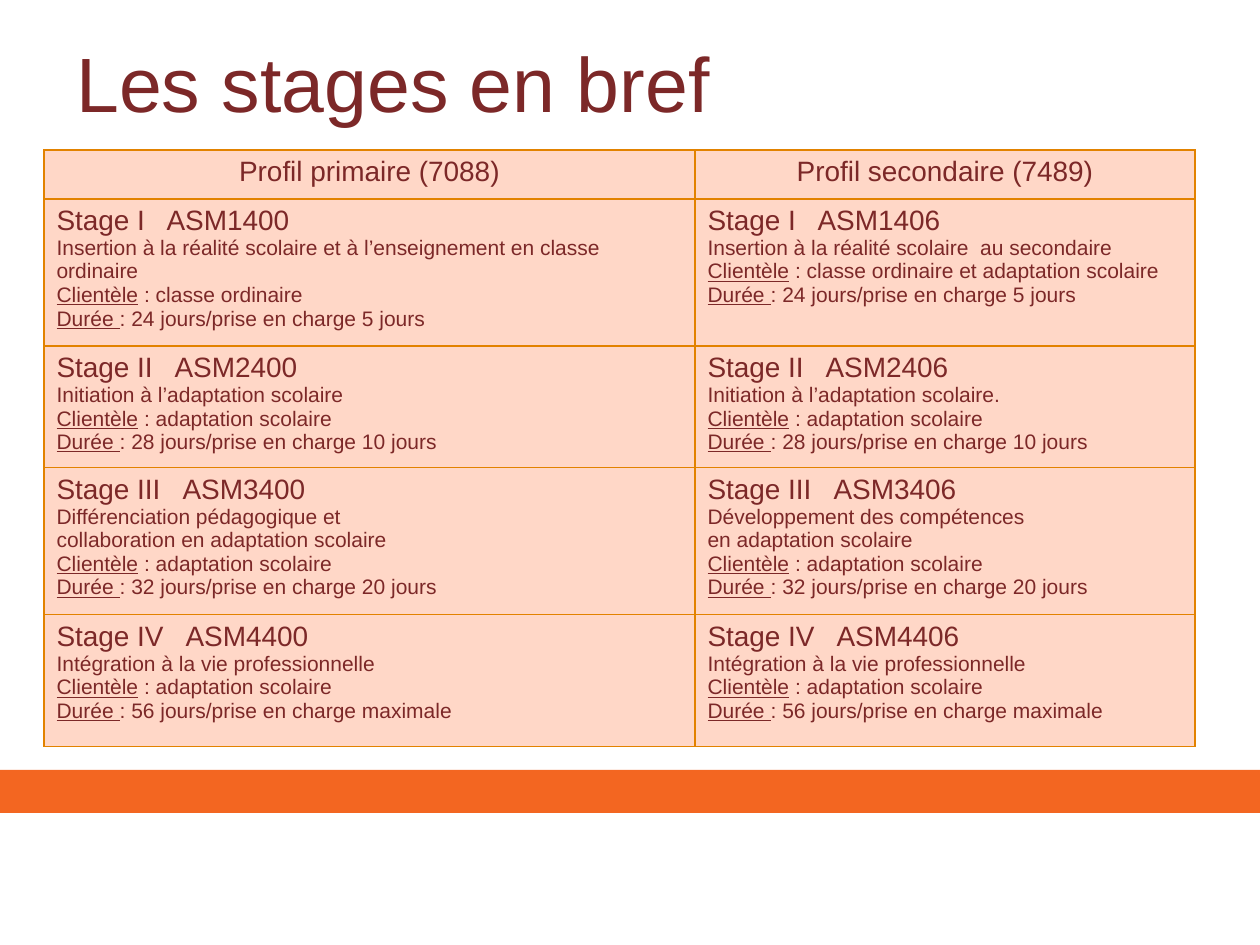
from copy import deepcopy

from lxml.etree import SubElement
from pptx import Presentation
from pptx.dml.color import RGBColor
from pptx.enum.shapes import MSO_SHAPE
from pptx.enum.text import MSO_ANCHOR, PP_ALIGN
from pptx.oxml.ns import qn
from pptx.util import Emu, Pt

PX = 914400 // 126
FONT, TEXT, ORANGE = "Arial", "7C2828", "F36621"
CELL_FILL, BORDER = "FFD7C7", "E28200"

COLUMNS = [651, 500]
ROWS = [49, 138, 119, 138, 132]
HEADERS = ["Profil primaire (7088)", "Profil secondaire (7489)"]
ADAPTATION = "adaptation scolaire"

# Per stage: number, tab stop of the code, duration,
# then one (code, description lines, clientele) per profile
STAGES = [
    ("I", 110, "24 jours/prise en charge 5 jours",
     [("ASM1400", ["Insertion à la réalité scolaire et à l’enseignement en classe ordinaire"],
       "classe ordinaire"),
      ("ASM1406", ["Insertion à la réalité scolaire  au secondaire"],
       "classe ordinaire et adaptation scolaire")]),
    ("II", 118, "28 jours/prise en charge 10 jours",
     [("ASM2400", ["Initiation à l’adaptation scolaire"], ADAPTATION),
      ("ASM2406", ["Initiation à l’adaptation scolaire."], ADAPTATION)]),
    ("III", 126, "32 jours/prise en charge 20 jours",
     [("ASM3400", ["Différenciation pédagogique et", "collaboration en adaptation scolaire"],
       ADAPTATION),
      ("ASM3406", ["Développement des compétences", "en adaptation scolaire"],
       ADAPTATION)]),
    ("IV", 129, "56 jours/prise en charge maximale",
     [("ASM4400", ["Intégration à la vie professionnelle"], ADAPTATION),
      ("ASM4406", ["Intégration à la vie professionnelle"], ADAPTATION)]),
]


def px(n):
    return Emu(n * PX)


def rgb(color):
    return RGBColor.from_string(color)


def add_run(p, text, size, underline=None):
    r = p.add_run()
    r.text = text
    r.font.name = FONT
    r.font.size = Pt(size)
    r.font.color.rgb = rgb(TEXT)
    r.font.underline = underline
    return r


def break_line(p, r):
    """End the line after run r, with a break of the same text size."""
    p.add_line_break()
    p._p[-1].append(deepcopy(r._r.rPr))


def add_tab_stop(p, pos):
    tabs = SubElement(p._p.get_or_add_pPr(), qn("a:tabLst"))
    SubElement(tabs, qn("a:tab"), pos=str(px(pos)), algn="l")


def style_cell(cell):
    tc_pr = cell._tc.get_or_add_tcPr()
    for side in ("a:lnL", "a:lnR", "a:lnT", "a:lnB"):
        ln = SubElement(tc_pr, qn(side), w=str(Pt(0.75)))
        SubElement(SubElement(ln, qn("a:solidFill")), qn("a:srgbClr"), val=BORDER)
    cell.fill.solid()
    cell.fill.fore_color.rgb = rgb(CELL_FILL)


def fill_stage(cell, number, tab, duration, code, description, clientele):
    p = cell.text_frame.paragraphs[0]
    add_tab_stop(p, tab)
    break_line(p, add_run(p, f"Stage {number}\t{code}", 16))
    for line in description:
        break_line(p, add_run(p, line, 12))
    add_run(p, "Clientèle", 12, True)
    break_line(p, add_run(p, f" : {clientele}", 12))
    add_run(p, "Durée ", 12, True)
    add_run(p, f": {duration}", 12)


def add_stage_table(s):
    frame = s.shapes.add_table(len(ROWS), len(COLUMNS), px(44), px(150),
                               px(sum(COLUMNS)), px(sum(ROWS)))
    table = frame.table
    table.first_row = table.horz_banding = False
    for column, width in zip(table.columns, COLUMNS):
        column.width = px(width)
    for row, height in zip(table.rows, ROWS):
        row.height = px(height)
    for cell in table.iter_cells():
        style_cell(cell)
    for col, header in enumerate(HEADERS):
        p = table.cell(0, col).text_frame.paragraphs[0]
        p.alignment = PP_ALIGN.CENTER
        add_run(p, header, 16)
    for row, (number, tab, duration, profiles) in enumerate(STAGES, start=1):
        for col, profile in enumerate(profiles):
            fill_stage(table.cell(row, col), number, tab, duration, *profile)


def add_title(s, text):
    tf = s.shapes.add_textbox(px(64), px(27), px(1134), px(110)).text_frame
    tf.word_wrap = True
    tf.vertical_anchor = MSO_ANCHOR.MIDDLE
    add_run(tf.paragraphs[0], text, 44)


def add_band(s):
    sp = s.shapes.add_shape(MSO_SHAPE.RECTANGLE, 0, px(770), px(1260), px(43))
    sp.shadow.inherit = False
    sp.fill.solid()
    sp.fill.fore_color.rgb = rgb(ORANGE)
    sp.line.fill.background()


def main():
    prs = Presentation()
    prs.slide_width, prs.slide_height = px(1260), px(945)
    s = prs.slides.add_slide(prs.slide_layouts[6])
    add_band(s)
    add_title(s, "Les stages en bref")
    add_stage_table(s)
    prs.save("out.pptx")


if __name__ == "__main__":
    main()
